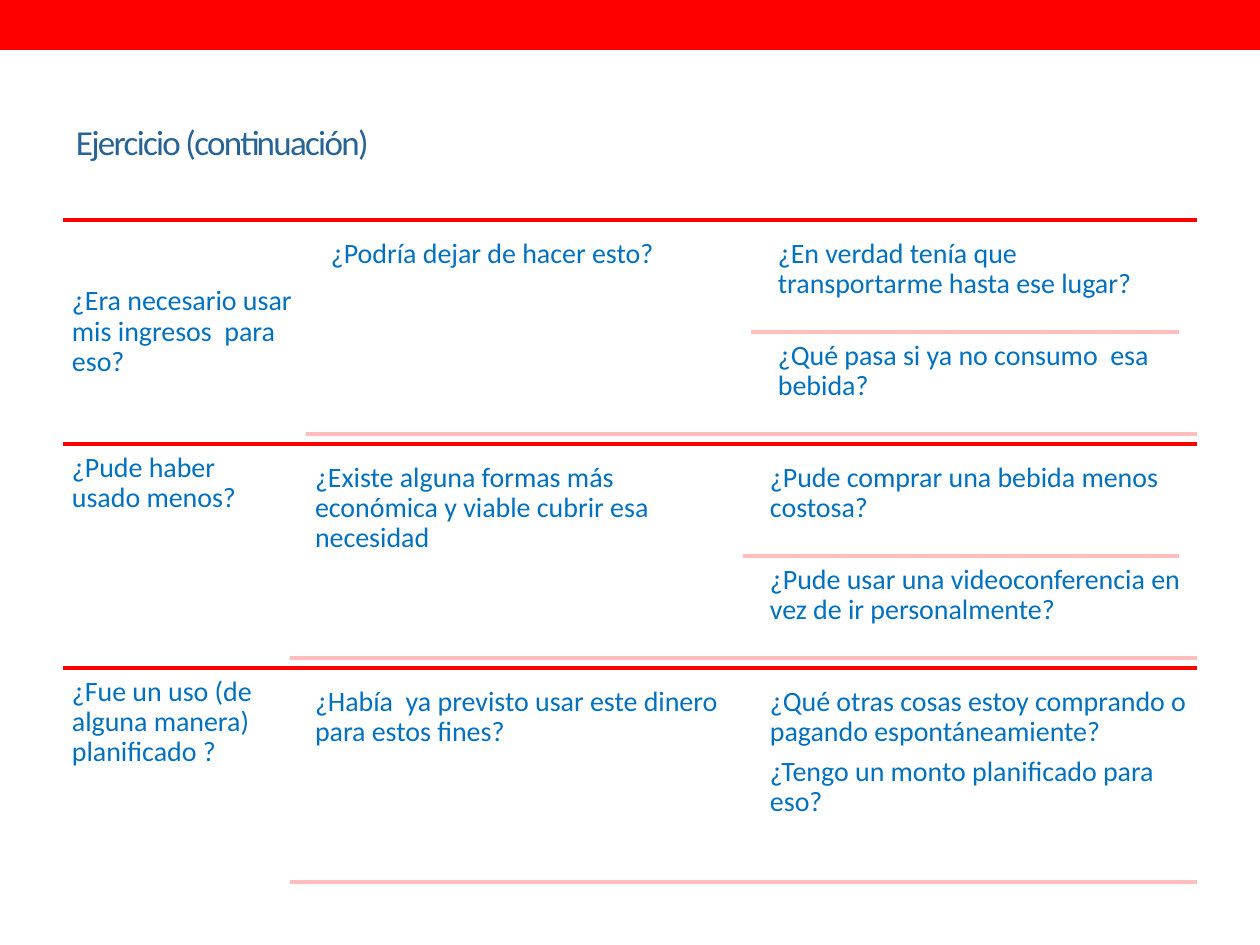
from lxml.etree import SubElement
from pptx import Presentation
from pptx.dml.color import RGBColor
from pptx.enum.shapes import MSO_CONNECTOR, MSO_SHAPE
from pptx.enum.text import MSO_ANCHOR
from pptx.oxml.ns import qn
from pptx.util import Emu, Pt

SCALE = 914400 / 126  # EMU in one px
RED, PINK, BLUE, TITLE_BLUE = "FF0000", "FFBDBD", "0070C0", "286395"
LEFT, RIGHT, TOP = 63, 1197, 220
ROW_H, PAD, HALF_H = 224, 10, 102
INSET, GAP, INDENT = 9, 16, 18

# label, label width, answer width, label anchor, middle text, right-hand cells
ROWS = [
    ("¿Era necesario usar mis ingresos  para eso?", 243, 428, MSO_ANCHOR.MIDDLE,
     "¿Podría dejar de hacer esto?",
     [["¿En verdad tenía que  transportarme hasta ese lugar?"],
      ["¿Qué pasa si ya no consumo  esa bebida?"]]),
    ("¿Pude haber usado menos?", 227, 436, MSO_ANCHOR.TOP,
     "¿Existe alguna formas más económica y viable cubrir esa necesidad",
     [["¿Pude comprar una bebida menos costosa?"],
      ["¿Pude usar una videoconferencia en vez de ir personalmente?"]]),
    ("¿Fue un uso (de alguna manera) planificado ?", 227, 436, MSO_ANCHOR.TOP,
     "¿Había  ya previsto usar este dinero para estos fines?",
     [["¿Qué otras cosas estoy comprando o pagando espontáneamiente?",
       "¿Tengo un monto planificado para eso?"]]),
]


def px(n):
    return Emu(round(n * SCALE))


def color(value):
    return RGBColor.from_string(value)


def add_band(s, x, y, w, h, fill):
    sp = s.shapes.add_shape(MSO_SHAPE.RECTANGLE, px(x), px(y), px(w), px(h))
    sp.shadow.inherit = False
    sp.fill.solid()
    sp.fill.fore_color.rgb = color(fill)
    sp.line.fill.background()


def add_rule(s, x1, x2, y, stroke):
    line = s.shapes.add_connector(MSO_CONNECTOR.STRAIGHT, px(x1), px(y), px(x2), px(y))
    line.line.color.rgb = color(stroke)
    line.line.width = Pt(2.08)
    SubElement(line._element.spPr, qn("a:effectLst"))


def add_text(s, x, y, w, h, texts, size=16, ink=BLUE, anchor=MSO_ANCHOR.TOP, inset=INSET):
    tf = s.shapes.add_textbox(px(x), px(y), px(w), px(h)).text_frame
    tf.word_wrap = True
    tf.vertical_anchor = anchor
    tf.margin_left = tf.margin_right = tf.margin_top = tf.margin_bottom = px(inset)
    tf.text = "\n".join(texts)
    for p in tf.paragraphs:
        p.font.size = Pt(size)
        p.font.name = "Calibri"
        p.font.color.rgb = color(ink)
        p.line_spacing = 0.9
        p.space_after = Pt(size * 0.35)
    return tf


def add_title(s, text):
    tf = add_text(s, LEFT, 73, RIGHT - LEFT, 136, [text], 20, TITLE_BLUE,
                  MSO_ANCHOR.MIDDLE, 13)
    p = tf.paragraphs[0]
    p.line_spacing = 1.0
    p.space_after = Pt(0)
    p.runs[0].font._element.set("spc", "-100")


def add_row(s, y, label, label_w, answer_w, anchor, middle, cells):
    add_rule(s, LEFT, RIGHT, y, RED)
    add_text(s, LEFT, y, label_w, ROW_H, [label], anchor=anchor)

    # Middle answer
    start, top, height = LEFT + label_w, y + PAD, 2 * HALF_H
    add_text(s, start + GAP, top, answer_w, height, [middle])

    # Right-hand cells share the row height, with a rule between them
    x, cell_h = RIGHT - answer_w, height // len(cells)
    for i, texts in enumerate(cells):
        cell_y = top + i * cell_h
        if i:
            add_rule(s, x - INDENT, RIGHT - INDENT, cell_y, PINK)
        add_text(s, x, cell_y, answer_w, cell_h, texts)
    add_rule(s, start, RIGHT, top + height, PINK)


def main():
    prs = Presentation()
    prs.slide_width, prs.slide_height = px(1260), px(945)
    s = prs.slides.add_slide(prs.slide_layouts[6])

    # Header
    add_band(s, 0, 0, 1260, 50, RED)
    add_title(s, "Ejercicio (continuación)")

    # Question rows
    for i, row in enumerate(ROWS):
        add_row(s, TOP + i * ROW_H, *row)
    prs.save("out.pptx")


if __name__ == "__main__":
    main()
